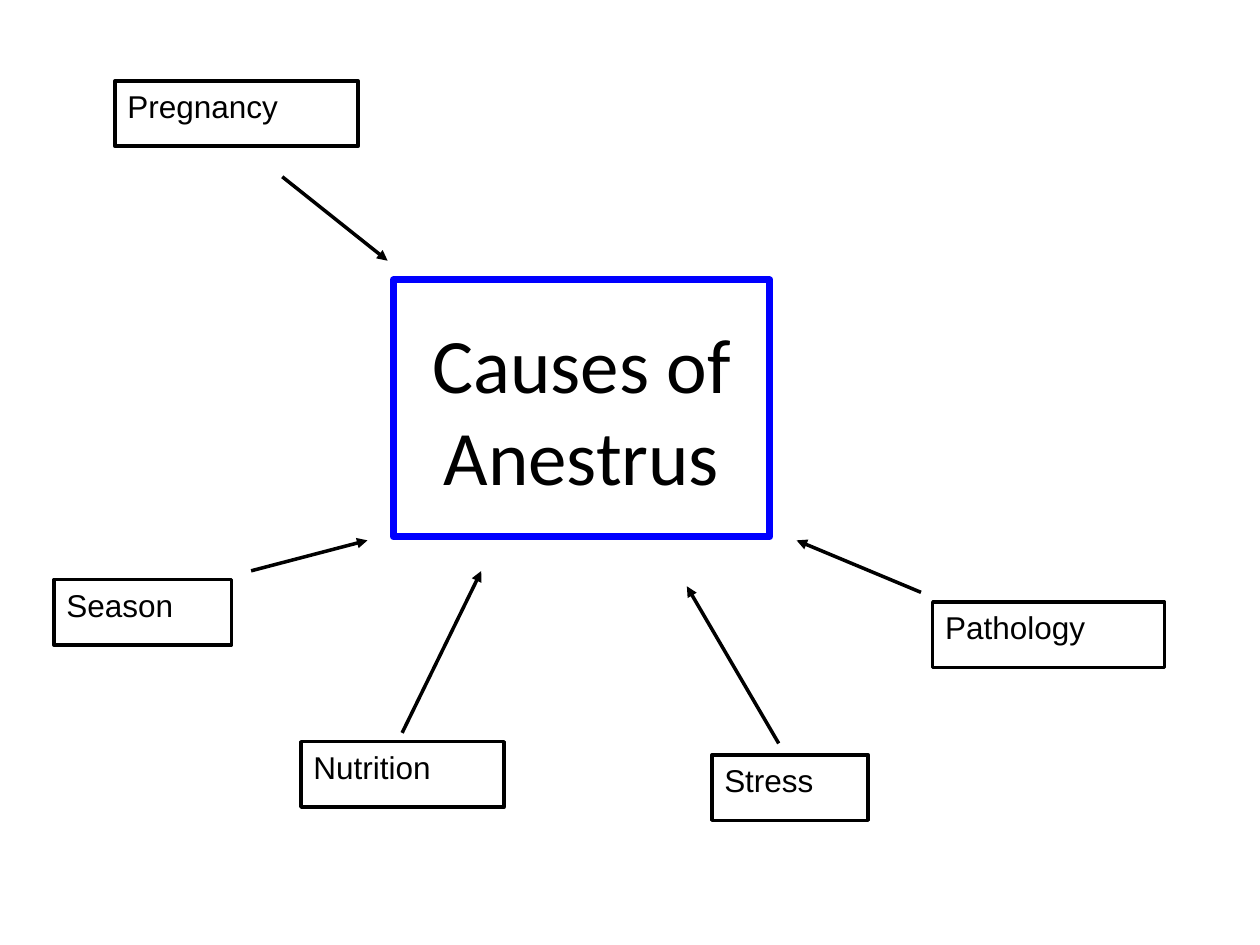
from typing import NamedTuple

from lxml import etree
from pptx import Presentation
from pptx.dml.color import RGBColor
from pptx.enum.shapes import MSO_CONNECTOR, MSO_SHAPE
from pptx.enum.text import MSO_ANCHOR, PP_ALIGN
from pptx.oxml.ns import qn
from pptx.shapes.connector import Connector
from pptx.slide import Slide
from pptx.util import Pt

RECTANGLE = MSO_SHAPE.RECTANGLE
STRAIGHT = MSO_CONNECTOR.STRAIGHT
TOP, MIDDLE = MSO_ANCHOR.TOP, MSO_ANCHOR.MIDDLE
LEFT, CENTER = PP_ALIGN.LEFT, PP_ALIGN.CENTER

COLORS = {"ink": "000000", "frame": "0000FF"}
CAUSE_HEIGHT = 37.4
CAUSE_LINE = 2


class BoxStyle(NamedTuple):
    line_color: str
    line_width: float
    font: dict
    anchor: MSO_ANCHOR
    alignment: PP_ALIGN


class Box(NamedTuple):
    text: str
    left: float
    top: float
    width: float
    height: float = CAUSE_HEIGHT


class Arrow(NamedTuple):
    start_x: float
    start_y: float
    end_x: float
    end_y: float


TOPIC_STYLE = BoxStyle("frame", 4, {"name": "Calibri", "size": Pt(44)}, MIDDLE, CENTER)
CAUSE_STYLE = BoxStyle("ink", CAUSE_LINE, {"name": "Arial", "size": Pt(18)}, TOP, LEFT)

TOPIC = Box("Causes of Anestrus", 224.8, 160, 215.2, 146.8)
CAUSES = [
    Box("Pregnancy", 65.7, 46.2, 139),
    Box("Season", 30.8, 331.2, 101.6),
    Box("Stress", 406.8, 431.4, 89.4),
    Box("Pathology", 533, 344, 132.5),
    Box("Nutrition", 172, 423.8, 116),
]
ARROWS = [
    Arrow(161.3, 101, 221.5, 149),
    Arrow(526.3, 338.5, 455.2, 308.8),
    Arrow(143.5, 326.2, 210, 308.8),
    Arrow(445, 424.8, 392.5, 335),
    Arrow(229.8, 418.8, 275, 326.3),
]


def color(name: str) -> RGBColor:
    return RGBColor.from_string(COLORS[name])


def draw_box(slide: Slide, box: Box, style: BoxStyle) -> None:
    shape = slide.shapes.add_shape(
        RECTANGLE, Pt(box.left), Pt(box.top), Pt(box.width), Pt(box.height)
    )
    shape.shadow.inherit = False
    shape.fill.background()
    shape.line.color.rgb = color(style.line_color)
    shape.line.width = Pt(style.line_width)
    frame = shape.text_frame
    frame.word_wrap = True
    frame.vertical_anchor = style.anchor
    paragraph = frame.paragraphs[0]
    paragraph.alignment = style.alignment
    run = paragraph.add_run()
    run.text = box.text
    for attribute, value in style.font.items():
        setattr(run.font, attribute, value)
    run.font.color.rgb = color("ink")


def draw_arrow(slide: Slide, arrow: Arrow) -> Connector:
    connector = slide.shapes.add_connector(STRAIGHT, *map(Pt, arrow))
    connector.line.color.rgb = color("ink")
    connector.line.width = Pt(CAUSE_LINE)
    properties = connector._element.spPr
    line = properties.find(qn("a:ln"))
    etree.SubElement(line, qn("a:tailEnd"), type="triangle")
    etree.SubElement(properties, qn("a:effectLst"))
    return connector


def main() -> None:
    presentation = Presentation()
    presentation.slide_width = Pt(720)
    presentation.slide_height = Pt(540)
    slide = presentation.slides.add_slide(presentation.slide_layouts[6])
    draw_box(slide, TOPIC, TOPIC_STYLE)
    for cause in CAUSES:
        draw_box(slide, cause, CAUSE_STYLE)
    for arrow in ARROWS:
        draw_arrow(slide, arrow)
    presentation.save("out.pptx")


if __name__ == "__main__":
    main()
